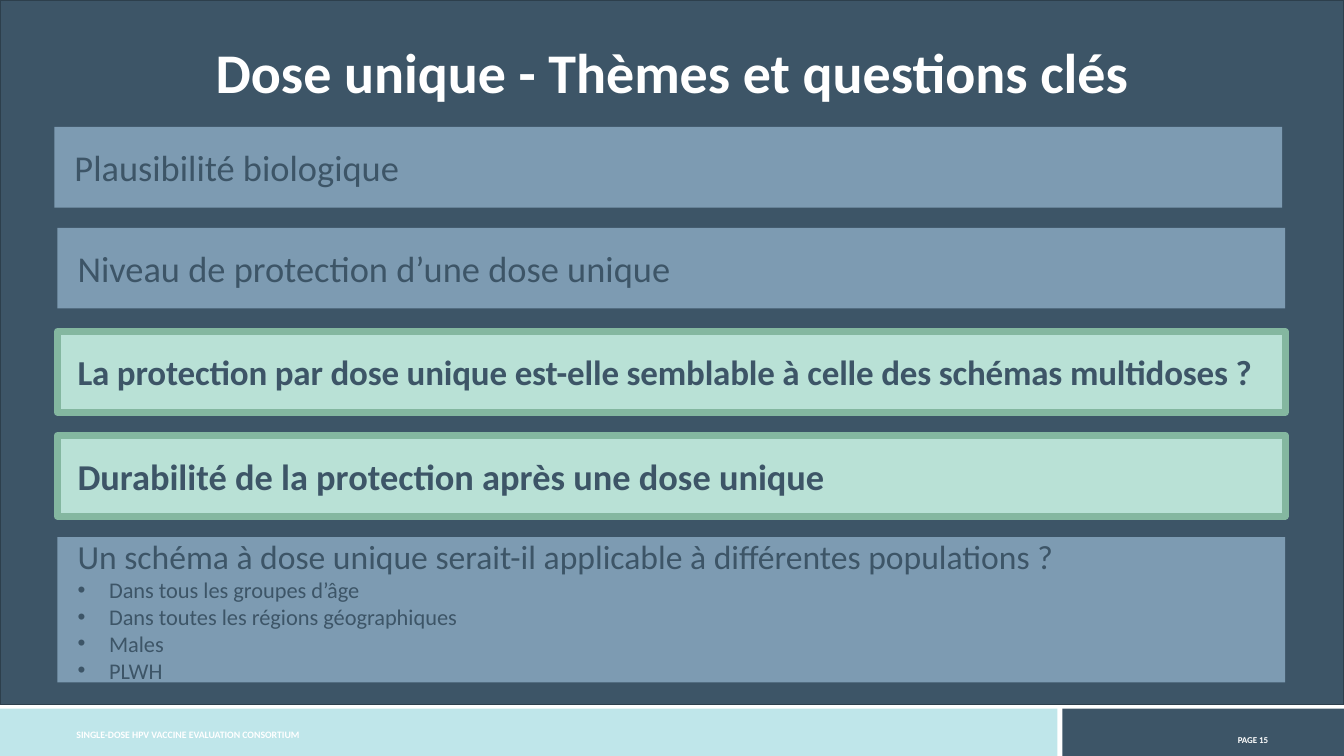
from dataclasses import dataclass

from lxml import etree
from pptx import Presentation
from pptx.dml.color import RGBColor
from pptx.enum import shapes, text
from pptx.oxml import ns
from pptx.util import Pt


@dataclass(frozen=True)
class Theme:
    """Colours, font and type sizes of the deck."""
    font: str = "Calibri"
    navy: str = "3D5567"
    navy_edge: str = "2D3F4C"
    aqua: str = "BFE6EA"
    steel: str = "7D9BB2"
    mint: str = "B9E1D6"
    green: str = "84B7A0"
    white: str = "FFFFFF"
    title: float = 40
    topic: float = 26
    tight_topic: float = 25
    long_topic: float = 24
    bullet: float = 16
    footer: float = 7
    page_number: float = 11


THEME = Theme()
WIDTH, HEIGHT = 960, 540
TOPIC_LEFT, TOPIC_WIDTH, TOPIC_HEIGHT = 41, 877, 57.6
POPULATIONS = ["Dans tous les groupes d’âge", "Dans toutes les régions géographiques", "Males", "PLWH"]


def add_panel(page, box, fill, line=None, weight=1):
    """Add a filled rectangle, outlined only when a line colour is given."""
    panel = page.shapes.add_shape(shapes.MSO_SHAPE.RECTANGLE, *map(Pt, box))
    panel.shadow.inherit = False
    panel.fill.solid()
    panel.fill.fore_color.rgb = RGBColor.from_string(fill)
    if line:
        panel.line.color.rgb = RGBColor.from_string(line)
        panel.line.width = Pt(weight)
    else:
        panel.line.fill.background()
    return panel


def write(para, wording, size, color, bold=False, align=text.PP_ALIGN.LEFT):
    """Fill a paragraph with one formatted run and return the run."""
    para.text = wording
    para.alignment = align
    span = para.runs[0]
    span.font.name = THEME.font
    span.font.size = Pt(size)
    span.font.bold = bold
    span.font.color.rgb = RGBColor.from_string(color)
    return span


def add_label(page, box, wording, size, align, anchor):
    """Add a bold white text box and return its paragraph."""
    frame = page.shapes.add_textbox(*map(Pt, box)).text_frame
    frame.word_wrap = True
    frame.vertical_anchor = anchor
    para = frame.paragraphs[0]
    write(para, wording, size, THEME.white, True, align)
    return para


def add_bullet(para, indent):
    """Give a paragraph a hanging round bullet."""
    properties = para._p.get_or_add_pPr()
    properties.set("marL", str(Pt(indent)))
    properties.set("indent", str(-Pt(indent)))
    etree.SubElement(properties, ns.qn("a:buFont")).set("typeface", "Arial")
    etree.SubElement(properties, ns.qn("a:buChar")).set("char", "•")


def add_topic(page, box, wording, size, active=False, details=()):
    """Add a topic bar, highlighted when active, with optional bullets."""
    fill, line = (THEME.mint, THEME.green) if active else (THEME.steel, None)
    frame = add_panel(page, box, fill, line, 5).text_frame
    frame.word_wrap = True
    frame.vertical_anchor = text.MSO_ANCHOR.MIDDLE
    frame.margin_left = Pt(14.4)
    span = write(frame.paragraphs[0], wording, size, THEME.navy, active)
    for detail in details:
        para = frame.add_paragraph()
        add_bullet(para, 22.5)
        write(para, detail, THEME.bullet, THEME.navy)
    return span


def add_footer(page, box):
    """Add the footer band with the consortium name and page number."""
    left, top, width, height = box
    split, gap = 755.3, 3.6
    add_panel(page, (left, top, split, height), THEME.aqua)
    add_panel(page, (left + split + gap, top, width - split - gap, height), THEME.navy)
    add_label(page, (left + 47.5, top + 10.8, 313, 15.8), "SINGLE-DOSE HPV VACCINE EVALUATION CONSORTIUM",
              THEME.footer, text.PP_ALIGN.LEFT, text.MSO_ANCHOR.MIDDLE)
    number = add_label(page, (left + 797, top + 13.7, 116, 15.8), "PAGE 15",
                       THEME.page_number, text.PP_ALIGN.RIGHT, text.MSO_ANCHOR.TOP)
    number.runs[0].font._element.set("baseline", "30000")


def add_title(page, box):
    """Add the centred slide title."""
    para = add_label(page, box, "Dose unique - Thèmes et questions clés", THEME.title,
                     text.PP_ALIGN.CENTER, text.MSO_ANCHOR.TOP)
    para.line_spacing = 0.9


def add_topics(page, box):
    """Stack the five topic bars from the top of the box."""
    left, top, width, height = box
    add_topic(page, (left - 2.2, top, width, TOPIC_HEIGHT), "Plausibilité biologique\u00a0".strip(), THEME.topic)
    add_topic(page, (left, top + 72, width, TOPIC_HEIGHT), "Niveau de protection d’une dose unique", THEME.topic)
    span = add_topic(page, (left, top + 146.2, width, TOPIC_HEIGHT),
                     "La protection par dose unique est-elle semblable à celle des schémas multidoses ?",
                     THEME.tight_topic, True)
    span.font._element.set("spc", "-10")
    add_topic(page, (left, top + 220.4, width, TOPIC_HEIGHT),
              "Durabilité de la protection après une dose unique", THEME.topic, True)
    add_topic(page, (left, top + 293, width, height - 293),
              "Un schéma à dose unique serait-il applicable à différentes populations ?",
              THEME.long_topic, details=POPULATIONS)


def main():
    """Build and save the deck."""
    deck = Presentation()
    deck.slide_width, deck.slide_height = Pt(WIDTH), Pt(HEIGHT)
    page = deck.slides.add_slide(deck.slide_layouts[6])
    add_footer(page, (0, 506.2, WIDTH, 33.8))
    add_panel(page, (0, 0, WIDTH, 503.3), THEME.navy, THEME.navy_edge)
    add_title(page, (6.5, 28.8, 947, 68.4))
    add_topics(page, (TOPIC_LEFT, 90.7, TOPIC_WIDTH, 396.7))
    deck.save("out.pptx")


if __name__ == "__main__":
    main()
